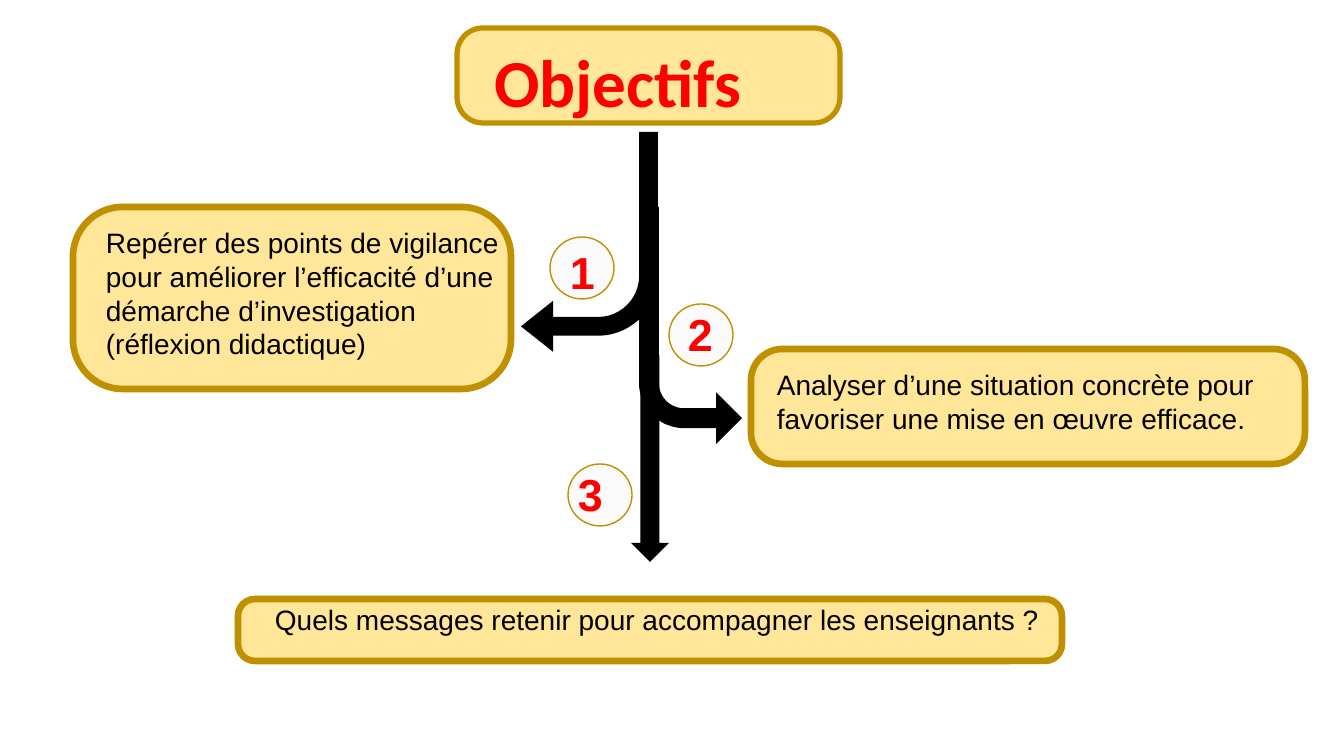
from pptx import Presentation
from pptx.dml.color import RGBColor
from pptx.enum.shapes import MSO_SHAPE
from pptx.enum.text import MSO_ANCHOR, MSO_AUTO_SIZE, PP_ALIGN
from pptx.util import Emu, Pt

SCALE = 914400 / 100.8  # EMU in one px
HUES = {"sand": "FFE699", "gold": "BF9000", "pale": "FAFAFA",
        "red": "FF0000", "black": "000000"}


def px(*nums):
    return [Emu(round(num * SCALE)) for num in nums]


class Board:
    def __init__(self, deck):
        self.slide = deck.slides.add_slide(deck.slide_layouts[5])
        self.shapes = self.slide.shapes

    def hue(self, name):
        return RGBColor.from_string(HUES[name])

    def shape(self, kind, area, fill, line=None, width=0, adjust=()):
        item = self.shapes.add_shape(kind, *px(*area))
        item.shadow.inherit = False
        item.fill.solid()
        item.fill.fore_color.rgb = self.hue(fill)
        if line:
            item.line.color.rgb = self.hue(line)
            item.line.width = Pt(width)
        else:
            item.line.fill.background()
        for i, value in enumerate(adjust):
            item.adjustments[i] = value
        return item

    def box(self, area, width=4.75):
        self.shape(MSO_SHAPE.ROUNDED_RECTANGLE, area, "sand", "gold", width, [0.273])

    def bend(self, area, adjust, **flips):
        arrow = self.shape(MSO_SHAPE.BENT_ARROW, area, "black", adjust=adjust)
        for name, value in flips.items():
            arrow.element.spPr.xfrm.set(name, value)

    def style(self, item, text, size, font="Arial", color="black", bold=False):
        frame = item.text_frame
        frame.text = text
        frame.word_wrap = True
        frame.auto_size = MSO_AUTO_SIZE.NONE
        frame.vertical_anchor = MSO_ANCHOR.TOP
        for para in frame.paragraphs:
            para.alignment = PP_ALIGN.LEFT
            for run in para.runs:
                run.font.size = Pt(size)
                run.font.name = font
                run.font.bold = bold
                run.font.color.rgb = self.hue(color)

    def text(self, area, text, size=20, **look):
        self.style(self.shapes.add_textbox(*px(*area)), text, size, **look)

    def title(self, area, text):
        item = self.shapes.title
        item.left, item.top, item.width, item.height = px(*area)
        self.style(item, text, 48, "Calibri", "red", True)
        item.element.getparent().append(item.element)  # bring to front

    def badge(self, left, top, area, label):
        self.shape(MSO_SHAPE.OVAL, (left, top, 64, 62), "pale", "gold", 1)
        self.text(area, label, 32, color="red", bold=True)


def main():
    deck = Presentation()
    deck.slide_width, deck.slide_height = px(1344, 756)
    board = Board(deck)

    # Title
    board.box((457, 28, 383, 95), 3.75)
    board.title((484, 35, 286, 92), "Objectifs")

    # Goal boxes
    goals = [
        ((73, 207, 438, 182), (96, 221, 442, 228),
         "Repérer des points de vigilance pour améliorer l’efficacité d’une "
         "démarche d’investigation (réflexion didactique)"),
        ((751, 349, 554, 115), (767, 363, 542, 78),
         "Analyser d’une situation concrète pour favoriser une mise en œuvre efficace."),
        ((238, 599, 824, 62), (265, 598, 807, 44),
         "Quels messages retenir pour accompagner les enseignants ?"),
    ]
    for frame, area, words in goals:
        board.box(frame)
        board.text(area, words)

    # Arrows
    board.bend((521, 132, 137, 220), (0.137, 0.187, 0.236, 0.438), flipH="1", flipV="1")
    board.bend((639, 207, 103, 237), (0.193, 0.25, 0.25, 0.438), flipV="1")
    board.shape(MSO_SHAPE.DOWN_ARROW, (631, 355, 38, 207), "black")

    # Numbers
    board.badge(550, 237, (560, 240, 78, 65), "1")
    board.badge(669, 304, (678, 302, 53, 65), "2")
    board.badge(568, 464, (568, 462, 64, 65), "3")

    deck.save("out.pptx")


if __name__ == "__main__":
    main()
